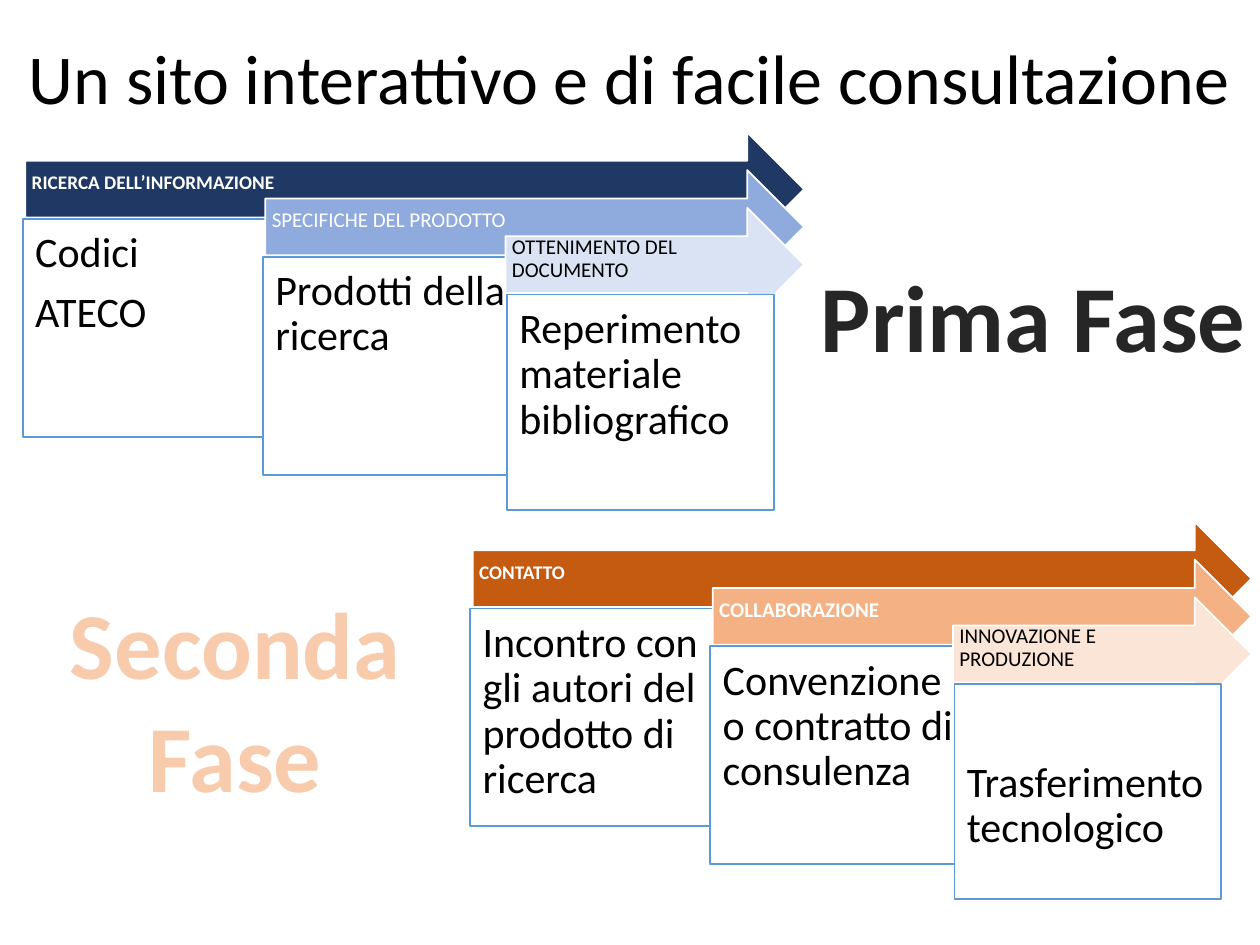
from lxml import etree
from pptx import Presentation
from pptx import util as u
from pptx.dml import color
from pptx.enum import shapes, text
from pptx.oxml import ns

WHITE, BLACK, BLUE = "FFFFFF", "000000", "5B9BD5"


def rgb(value):
    return color.RGBColor.from_string(value)


class SlideBuilder:
    font_name = "Calibri"
    line_spacing = 0.9
    space_ratio = 0.35

    def __init__(self, slide):
        self.slide = slide

    def add_lines(self, shape, lines, size, ink, bold=False, outline=None,
                  align=text.PP_ALIGN.LEFT, compact=True):
        frame = shape.text_frame
        for index, line in enumerate(lines):
            paragraph = frame.paragraphs[0] if index == 0 else frame.add_paragraph()
            paragraph.alignment = align
            if compact:
                paragraph.line_spacing = self.line_spacing
                paragraph.space_after = u.Pt(round(size * self.space_ratio, 2))
            run = paragraph.add_run()
            run.text = line
            run.font.name = self.font_name
            run.font.size = u.Pt(size)
            run.font.bold = bold
            run.font.color.rgb = rgb(ink)
            if outline:
                self.outline(run, *outline)

    def outline(self, run, ink, width):
        line = etree.Element(ns.qn("a:ln"), w=str(u.Pt(width)))
        fill = etree.SubElement(line, ns.qn("a:solidFill"))
        etree.SubElement(fill, ns.qn("a:srgbClr"), val=ink)
        run._r.get_or_add_rPr().insert(0, line)

    def panel(self, group, kind, bounds, fill, border, insets, anchor):
        shape = group.shapes.add_shape(kind, *map(u.Cm, bounds))
        shape.shadow.inherit = False
        shape.fill.solid()
        shape.fill.fore_color.rgb = rgb(fill)
        shape.line.color.rgb = rgb(border)
        shape.line.width = u.Pt(1)
        frame = shape.text_frame
        frame.word_wrap = True
        frame.vertical_anchor = anchor
        (frame.margin_left, frame.margin_top,
         frame.margin_right, frame.margin_bottom) = map(u.Cm, insets)
        return shape

    def arrow(self, group, bounds, fill, label, size, ink, bold):
        shape = self.panel(group, shapes.MSO_SHAPE.RIGHT_ARROW, bounds, fill, WHITE,
                           (0.13, 0.13, 0.71, 0.36), text.MSO_ANCHOR.MIDDLE)
        self.add_lines(shape, [label], size, ink, bold)

    def box(self, group, bounds, lines, top_inset):
        shape = self.panel(group, shapes.MSO_SHAPE.RECTANGLE, bounds, WHITE, BLUE,
                           (0.25, top_inset, 0.25, 0.25), text.MSO_ANCHOR.TOP)
        self.add_lines(shape, lines, 24, BLACK)

    def phase(self, left, top, steps):
        group = self.slide.shapes.add_group_shape()
        for index, (fill, label, size, ink, bold, lines, top_inset) in enumerate(steps):
            last = index == len(steps) - 1
            x, y = left + 4.84 * index, top + 0.76 * index
            self.arrow(group, (x, y, 15.7 - 4.84 * index, 2.29),
                       fill, label, size, ink, bold)
            self.box(group, (x + (0.03 if last else -0.05), y + 1.75,
                             5.38, 4.34 if last else 4.39), lines, top_inset)

    def textbox(self, bounds, lines, size, ink, wrap=False, anchor=text.MSO_ANCHOR.TOP,
                **style):
        shape = self.slide.shapes.add_textbox(*map(u.Cm, bounds))
        shape.text_frame.word_wrap = wrap
        shape.text_frame.vertical_anchor = anchor
        self.add_lines(shape, lines, size, ink, **style)

    def heading(self, bounds, lines, ink, outline):
        self.textbox(bounds, lines, 54, ink, bold=True, outline=outline,
                     align=text.PP_ALIGN.CENTER, compact=False)


def main():
    presentation = Presentation()
    presentation.slide_width, presentation.slide_height = u.Cm(25.4), u.Cm(19.05)
    builder = SlideBuilder(presentation.slides.add_slide(presentation.slide_layouts[6]))

    builder.textbox((0.33, 0.3, 25.07, 2.72),
                    ["Un sito interattivo e di facile consultazione"], 40, BLACK,
                    wrap=True, anchor=text.MSO_ANCHOR.MIDDLE)
    builder.phase(0.51, 2.67, [
        ("203864", "RICERCA DELL’INFORMAZIONE", 11, WHITE, True,
         ["Codici", "ATECO"], 0.25),
        ("8FAADC", "SPECIFICHE DEL PRODOTTO", 12, WHITE, False,
         ["Prodotti della ricerca"], 0.25),
        ("DAE3F3", "OTTENIMENTO DEL DOCUMENTO", 12, BLACK, False,
         ["Reperimento materiale bibliografico"], 0.25),
    ])
    builder.phase(9.53, 10.52, [
        ("C55A11", "CONTATTO", 11, WHITE, True,
         ["Incontro con gli autori del prodotto di ricerca"], 0.25),
        ("F4B183", "COLLABORAZIONE", 12, WHITE, True,
         ["Convenzione o contratto di consulenza"], 0.25),
        ("FBE5D6", "INNOVAZIONE E PRODUZIONE", 12, BLACK, False,
         ["Trasferimento tecnologico"], 1.55),
    ])
    builder.heading((16.26, 5.08, 9.14, 2.57), ["Prima Fase"], "262626", (WHITE, 1.06))
    builder.heading((1.12, 11.66, 7.24, 4.88), ["Seconda", "Fase"], "F8CBAD",
                    ("ED7D31", 1.75))
    presentation.save("out.pptx")


if __name__ == "__main__":
    main()
